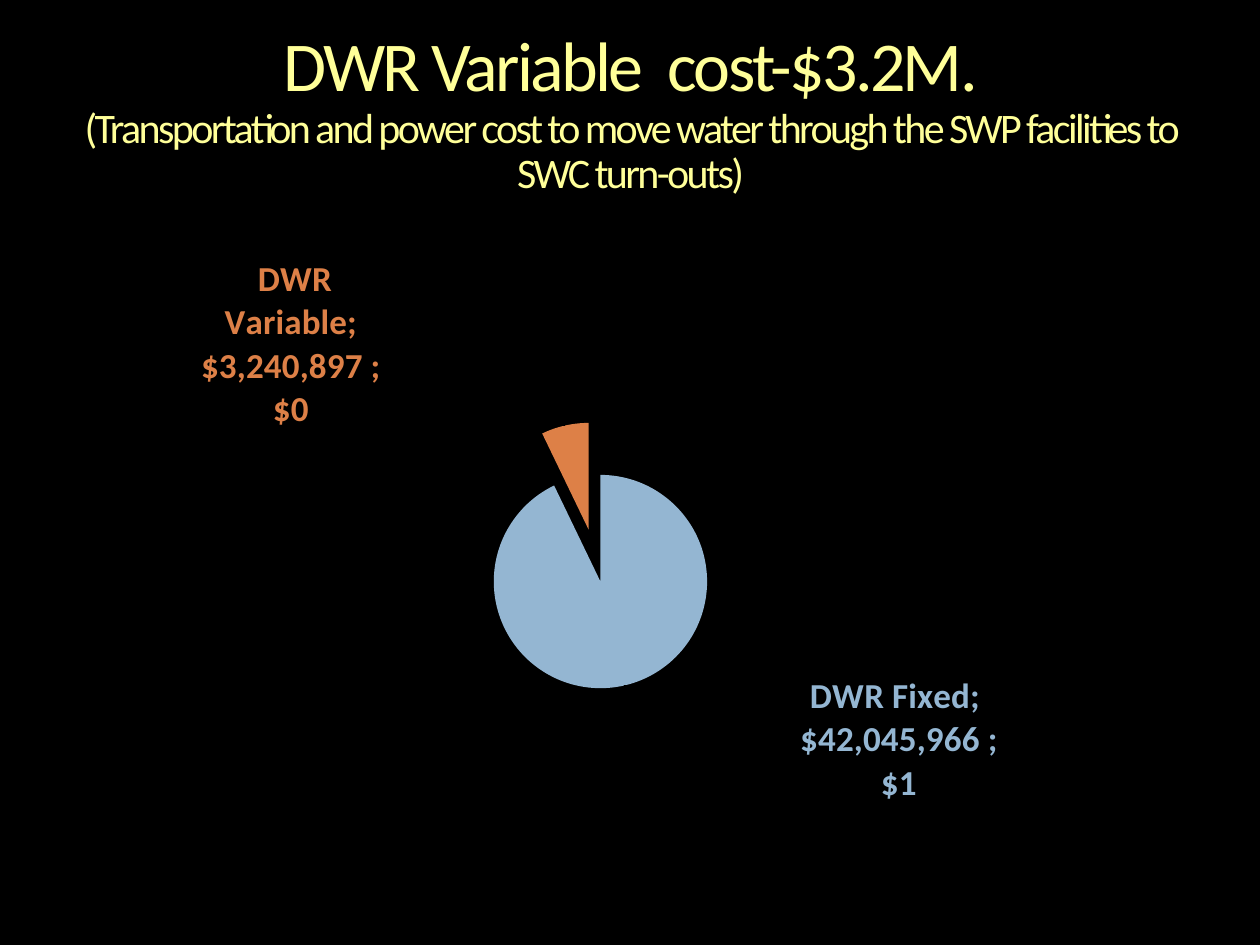
from dataclasses import dataclass

from lxml import etree
from pptx import Presentation
from pptx import util as u
from pptx.chart.data import CategoryChartData
from pptx.dml.color import RGBColor
from pptx.enum import chart as ch, text
from pptx.oxml import parse_xml
from pptx.oxml.ns import nsdecls, qn

BLACK = RGBColor(0x00, 0x00, 0x00)
WHITE = RGBColor(0xFF, 0xFF, 0xFF)
YELLOW = RGBColor(0xFF, 0xFF, 0x99)
BLUE = RGBColor(0x94, 0xB6, 0xD2)
ORANGE = RGBColor(0xDD, 0x80, 0x47)
FONT = "Calibri"
WIDTH, HEIGHT = u.Inches(10), u.Inches(7.5)
MONEY = '_("$"* #,##0_);_("$"* \\(#,##0\\);_("$"* "-"??_);_(@_)'


@dataclass
class Slice:
    """A pie slice, with its label shift as shares of the chart."""
    name: str
    cost: int
    color: RGBColor
    dx: float
    dy: float


@dataclass
class TitleLine:
    """A title run and its size in points."""
    words: str
    size: int


SLICES = [
    Slice("DWR Fixed", 42045966, BLUE, 0.17, -0.03),
    Slice("DWR Variable", 3240897, ORANGE, -0.17, 0.02),
]
TITLE = [
    TitleLine("DWR Variable  cost-$3.2M.", 40),
    TitleLine("(Transportation and power cost to move water through "
              "the SWP facilities to SWC turn-outs)", 24),
]


def apply(target, values: dict) -> None:
    """Set each named attribute on the target."""
    for name, value in values.items():
        setattr(target, name, value)


def box(x: float, y: float, w: float, h: float) -> tuple:
    """Turn shares of the slide into lengths."""
    return int(x * WIDTH), int(y * HEIGHT), int(w * WIDTH), int(h * HEIGHT)


def layout(**values):
    """Build a manual chart layout."""
    parts = "".join(f'<c:{k} val="{v}"/>' for k, v in values.items())
    return parse_xml(f'<c:layout {nsdecls("c")}><c:manualLayout>{parts}'
                     '</c:manualLayout></c:layout>')


def add_title(s, lines: list[TitleLine]) -> None:
    """Draw the title as one paragraph with line breaks."""
    tf = s.shapes.add_textbox(*box(0.042, 0.033, 0.917, 0.178)).text_frame
    apply(tf, dict(word_wrap=True, margin_left=0, margin_right=0,
                   margin_top=0, margin_bottom=0))
    p = tf.paragraphs[0]
    apply(p, dict(alignment=text.PP_ALIGN.CENTER, line_spacing=0.9))
    for i, line in enumerate(lines):
        if i:
            p.add_line_break()
        r = p.add_run()
        r.text = line.words
        apply(r.font, dict(name=FONT, size=u.Pt(line.size)))
        r.font.color.rgb = YELLOW
        r.font._element.set("spc", "-150")


def format_slice(point, item: Slice) -> None:
    """Colour one slice and place its label."""
    point.format.fill.solid()
    point.format.fill.fore_color.rgb = item.color
    label = point.data_label
    apply(label.font, dict(name=FONT, size=u.Pt(20), bold=True))
    label.font.color.rgb = item.color
    label.position = ch.XL_LABEL_POSITION.OUTSIDE_END


def add_pie(s, items: list[Slice]) -> None:
    """Draw the exploded pie of costs."""
    data = CategoryChartData(number_format=MONEY)
    data.categories = [item.name for item in items]
    data.add_series("Series 1", [item.cost for item in items])
    chart = s.shapes.add_chart(ch.XL_CHART_TYPE.PIE,
                               *box(0.073, 0.237, 0.814, 0.65), data).chart
    apply(chart, dict(has_legend=False, has_title=False))
    apply(chart.font, dict(name=FONT, size=u.Pt(10)))
    chart.font.color.rgb = WHITE
    plot = chart.plots[0]
    plot.vary_by_categories = True
    series = plot.series[0]
    for i, item in enumerate(items):
        format_slice(series.points[i], item)
    ser = series._element
    ser.find(qn("c:dPt")).addprevious(
        parse_xml(f'<c:explosion {nsdecls("c")} val="25"/>'))
    for label, item in zip(ser.iter(qn("c:dLbl")), items):
        fmt = etree.Element(qn("c:numFmt"), formatCode=MONEY, sourceLinked="0")
        idx = label.find(qn("c:idx"))
        idx.addnext(fmt)
        idx.addnext(layout(x=item.dx, y=item.dy))
        for flag in ("showVal", "showCatName", "showPercent"):
            label.find(qn(f"c:{flag}")).set("val", "1")
        etree.SubElement(label, qn("c:separator")).text = "; "
    area = chart._chartSpace.find(".//" + qn("c:plotArea"))
    for old in area.findall(qn("c:layout")):
        area.remove(old)
    area.insert(0, layout(layoutTarget="inner", xMode="edge", yMode="edge",
                          x=0.36, y=0.32, w=0.26, h=0.44))


def main() -> None:
    """Build the slide and save it."""
    prs = Presentation()
    apply(prs, dict(slide_width=WIDTH, slide_height=HEIGHT))
    s = prs.slides.add_slide(prs.slide_layouts[6])
    s.background.fill.solid()
    s.background.fill.fore_color.rgb = BLACK
    add_title(s, TITLE)
    add_pie(s, SLICES)
    prs.save("out.pptx")


if __name__ == "__main__":
    main()
